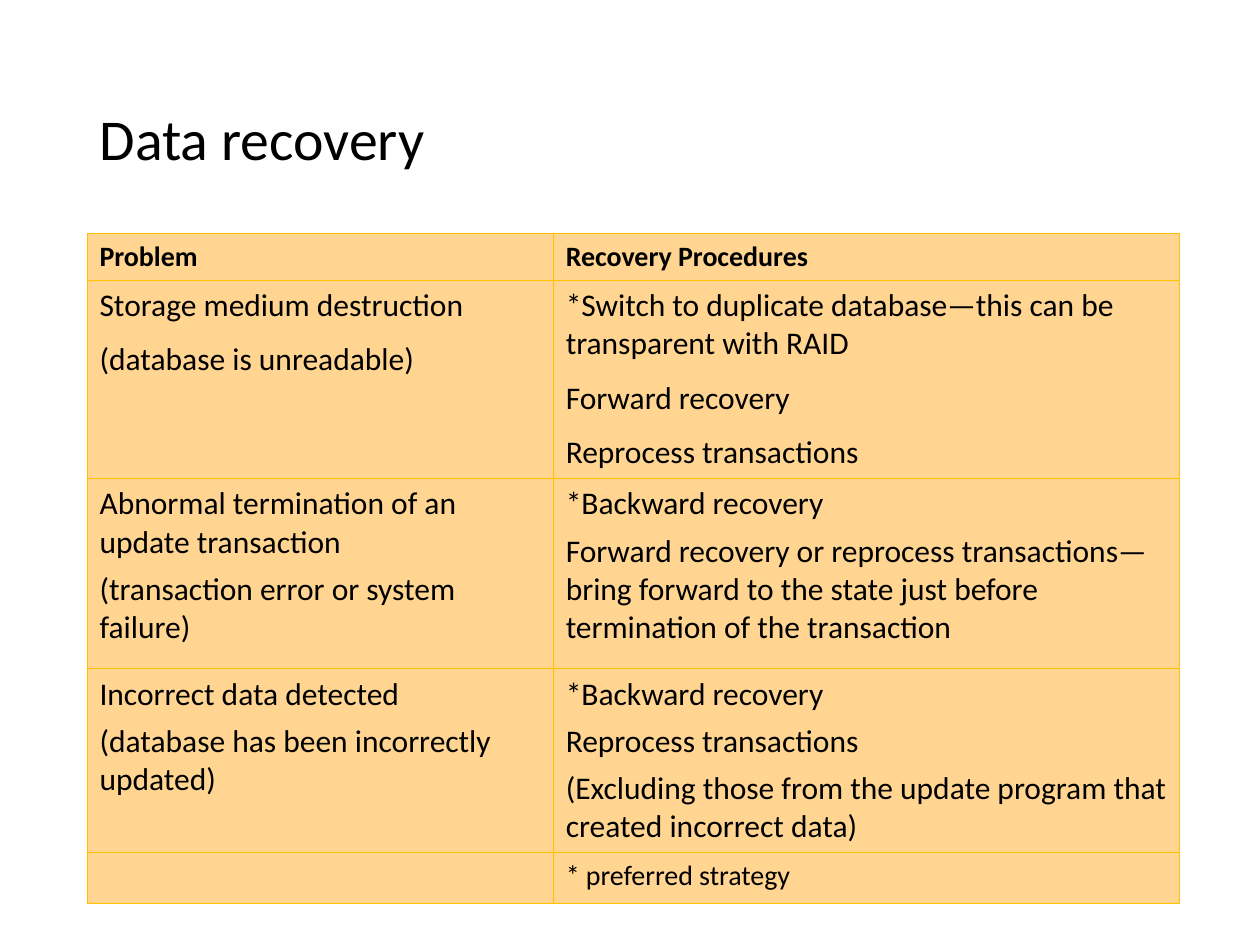
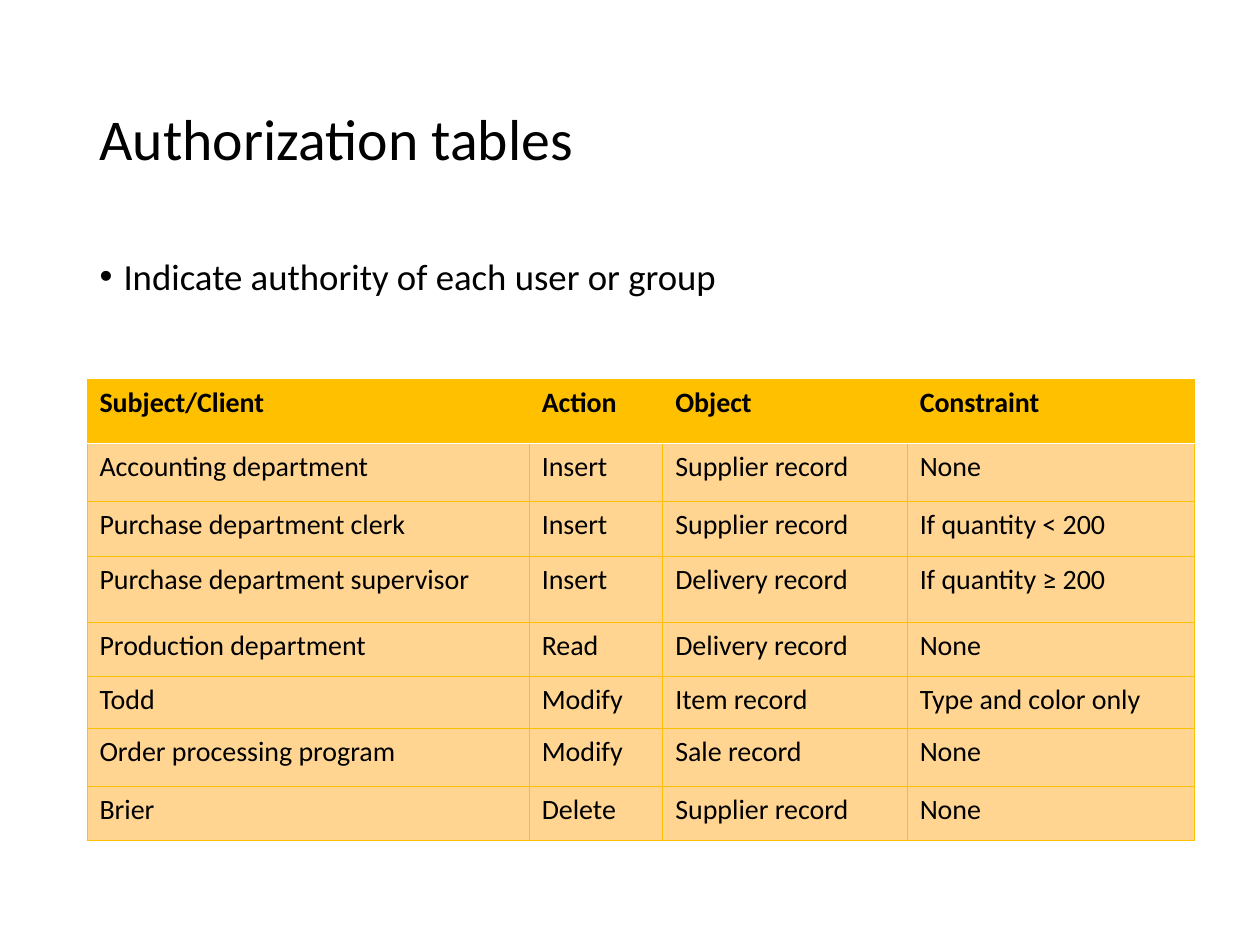
from lxml.etree import SubElement
from pptx import Presentation
from pptx.dml.color import RGBColor
from pptx.enum.text import MSO_ANCHOR, PP_ALIGN
from pptx.oxml.ns import qn
from pptx.util import Inches, Pt

BLACK = RGBColor(0, 0, 0)
WHITE = RGBColor(255, 255, 255)
GOLD = RGBColor(0xFF, 0xC0, 0x00)
PEACH = RGBColor(0xFF, 0xD5, 0x91)
FONT = "Calibri"
LEFT, WIDE = 0.69, 8.62

RECOVERY = {
    "top": 1.85,
    "cols": [3.7, 4.97],
    "heights": [0.37, 1.43, 1.51, 1.31, 0.37],
    "sizes": [16, 18, 18, 18, 16],
    "gaps": [8.5, 9.2, 5, 5, 5],
    "head": PEACH,
    "rule": GOLD,
    "rows": [
        ("Problem", "Recovery Procedures"),
        ("Storage medium destruction\n(database is unreadable)",
         "*Switch to duplicate database—this can be transparent with RAID\n"
         "Forward recovery\nReprocess transactions"),
        ("Abnormal termination of an update transaction\n"
         "(transaction error or system failure)",
         "*Backward recovery\nForward recovery or reprocess transactions—bring "
         "forward to the state just before termination of the transaction"),
        ("Incorrect data detected\n(database has been incorrectly updated)",
         "*Backward recovery\nReprocess transactions\n"
         "(Excluding those from the update program that created incorrect data)"),
        ("", "* preferred strategy"),
    ],
}

RIGHTS = {
    "top": 3.01,
    "cols": [3.51, 1.06, 1.94, 2.28],
    "heights": [0.51, 0.46, 0.44, 0.52, 0.43, 0.41, 0.46, 0.43],
    "sizes": [16] * 8,
    "gaps": [3.2] * 8,
    "head": GOLD,
    "rule": WHITE,
    "rows": [
        ("Subject/Client", "Action", "Object", "Constraint"),
        ("Accounting department", "Insert", "Supplier record", "None"),
        ("Purchase department clerk", "Insert", "Supplier record", "If quantity < 200"),
        ("Purchase department supervisor", "Insert", "Delivery record", "If quantity ≥ 200"),
        ("Production department", "Read", "Delivery record", "None"),
        ("Todd", "Modify", "Item record", "Type and color only"),
        ("Order processing program", "Modify", "Sale record", "None"),
        ("Brier", "Delete", "Supplier record", "None"),
    ],
}

SLIDES = [
    ("Data recovery", None, RECOVERY),
    ("Authorization tables", "Indicate authority of each user or group", RIGHTS),
]


def style(para, size, gap=0, bold=False):
    para.alignment = PP_ALIGN.LEFT
    para.space_before = Pt(gap)
    for run in para.runs:
        font = run.font
        font.name, font.size, font.bold = FONT, Pt(size), bold
        font.color.rgb = BLACK


def place(shape, text, top, high, size, gap=0):
    shape.left, shape.top = Inches(LEFT), Inches(top)
    shape.width, shape.height = Inches(WIDE), Inches(high)
    shape.text_frame.text = text
    para = shape.text_frame.paragraphs[0]
    para.line_spacing = 0.9
    style(para, size, gap)
    return para


def edge(cell, side, color, width=0.5):
    props = cell._tc.get_or_add_tcPr()
    line = SubElement(props, qn(f"a:ln{side}"), w=str(Pt(width)))
    fill = SubElement(line, qn("a:solidFill"))
    SubElement(fill, qn("a:srgbClr"), val=str(color))


def add_grid(slide, data):
    rows, cols, highs = data["rows"], data["cols"], data["heights"]
    frame = slide.shapes.add_table(
        len(rows), len(cols), Inches(LEFT), Inches(data["top"]),
        Inches(sum(cols)), Inches(sum(highs)))
    table = frame.table
    table.horz_banding = False
    for col, width in zip(table.columns, cols):
        col.width = Inches(width)
    for r, texts in enumerate(rows):
        table.rows[r].height = Inches(highs[r])
        for c, text in enumerate(texts):
            cell = table.cell(r, c)
            for side in "LRTB":
                ruled = (r, side) in ((0, "B"), (1, "T"))
                color = data["rule"] if ruled else GOLD
                edge(cell, side, color, 1 if color == WHITE else 0.5)
            cell.fill.solid()
            cell.fill.fore_color.rgb = PEACH if r else data["head"]
            cell.text_frame.text = text
            for para in cell.text_frame.paragraphs:
                style(para, data["sizes"][r], data["gaps"][r], r == 0)


def add_slide(deck, title, point, data):
    slide = deck.slides.add_slide(deck.slide_layouts[1 if point else 5])
    place(slide.shapes.title, title, 0.4, 1.45, 33)
    slide.shapes.title.text_frame.vertical_anchor = MSO_ANCHOR.MIDDLE
    if point:
        para = place(slide.placeholders[1], point, 2, 4.76, 21, 7.5)
        props = para._p.get_or_add_pPr()
        props.set("marL", str(Inches(0.19)))
        props.set("indent", str(Inches(-0.19)))
        SubElement(props, qn("a:buChar"), char="•")
    add_grid(slide, data)


def main():
    """Build the data recovery and authorization slides."""
    deck = Presentation()
    deck.slide_width, deck.slide_height = Inches(10), Inches(7.5)
    for title, point, data in SLIDES:
        add_slide(deck, title, point, data)
    deck.save("out.pptx")


if __name__ == "__main__":
    main()
